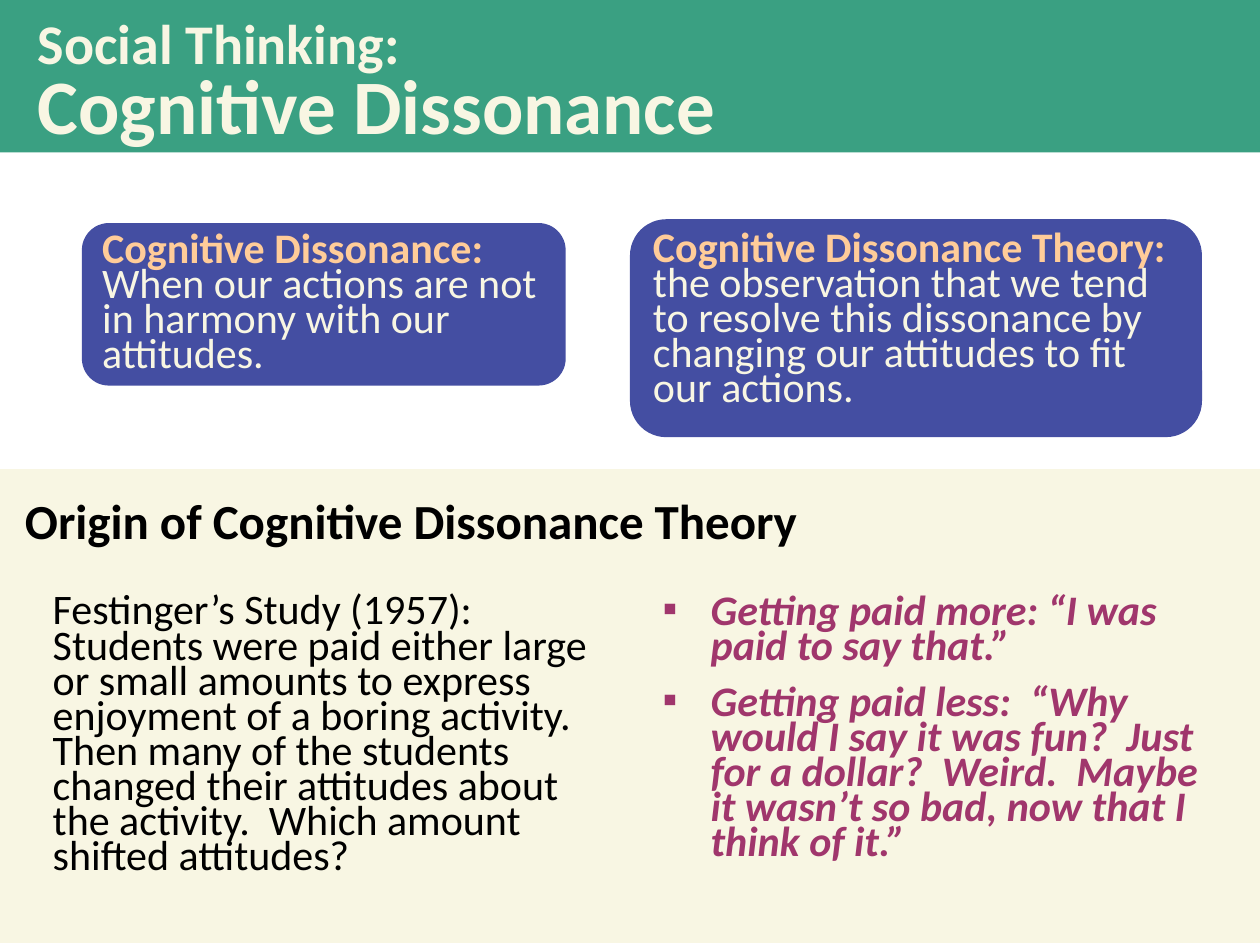
import lxml.etree
import pptx
import pptx.dml.color
import pptx.enum.shapes
import pptx.enum.text
import pptx.oxml.ns
import pptx.util

Inches = pptx.util.Inches
Pt = pptx.util.Pt
MSO_SHAPE = pptx.enum.shapes.MSO_SHAPE
MSO_ANCHOR = pptx.enum.text.MSO_ANCHOR
MSO_AUTO_SIZE = pptx.enum.text.MSO_AUTO_SIZE
PP_ALIGN = pptx.enum.text.PP_ALIGN

COLORS = {
    "banner": "3AA082",
    "cream": "F8F6E3",
    "card": "444EA2",
    "term": "FFCC99",
    "quote": "A0366C",
    "ink": "000000",
}


class SlideBuilder:
    """Holds the style and the current slide, with a method for each element."""

    font_name = "Calibri"
    body_size = 24
    line_pitch = 20

    def __init__(self, presentation):
        self.slide = presentation.slides.add_slide(presentation.slide_layouts[1])

    def rgb(self, color):
        return pptx.dml.color.RGBColor.from_string(COLORS[color])

    def fill(self, shape, color):
        shape.fill.solid()
        shape.fill.fore_color.rgb = self.rgb(color)

    def place(self, shape, left, top, width, height):
        shape.left, shape.top = Inches(left), Inches(top)
        shape.width, shape.height = Inches(width), Inches(height)

    def frame(self, shape, anchor=MSO_ANCHOR.TOP):
        text_frame = shape.text_frame
        text_frame.word_wrap = True
        text_frame.auto_size = MSO_AUTO_SIZE.NONE
        text_frame.vertical_anchor = anchor
        return text_frame

    def format(self, paragraph, color, size=body_size, bold=False, italic=False,
               pitch=line_pitch, after=0):
        paragraph.alignment = PP_ALIGN.LEFT
        paragraph.line_spacing = Pt(pitch)
        paragraph.space_before = Pt(0)
        paragraph.space_after = Pt(after)
        font = paragraph.font
        font.name, font.size = self.font_name, Pt(size)
        font.bold, font.italic = bold, italic
        font.color.rgb = self.rgb(color)

    def block(self, kind, color, *box):
        shape = self.slide.shapes.add_shape(kind, *map(Inches, box))
        shape.shadow.inherit = False
        self.fill(shape, color)
        shape.line.fill.background()
        return shape

    def panel(self, color, *box):
        panel = self.block(MSO_SHAPE.RECTANGLE, color, *box)
        panel.line.color.rgb = self.rgb(color)
        panel.line.width = Pt(2)
        panel.element.getparent().insert(2, panel.element)

    def title(self, lines, *box):
        title = self.slide.shapes.title
        self.place(title, *box)
        self.fill(title, "banner")
        text_frame = self.frame(title, MSO_ANCHOR.MIDDLE)
        text_frame.margin_left = Inches(0.3)
        paragraph = text_frame.paragraphs[0]
        self.format(paragraph, "cream", bold=True, pitch=42)
        for index, (text, size) in enumerate(lines):
            if index:
                paragraph.add_line_break()
            run = paragraph.add_run()
            run.text = text
            run.font.size = Pt(size)

    def definition(self, term, meaning, *box):
        card = self.block(MSO_SHAPE.ROUNDED_RECTANGLE, "card", *box)
        paragraph = self.frame(card).paragraphs[0]
        self.format(paragraph, "cream")
        for text in (term, meaning):
            run = paragraph.add_run()
            run.text = text
            run.font.bold = text == term
            run.font.color.rgb = self.rgb("term" if text == term else "cream")

    def text(self, content, *box, **style):
        text_box = self.slide.shapes.add_textbox(*map(Inches, box))
        paragraph = self.frame(text_box).paragraphs[0]
        paragraph.text = content
        self.format(paragraph, "ink", **style)

    def bullets(self, items, *box):
        body = self.slide.placeholders[1]
        self.place(body, *box)
        text_frame = self.frame(body)
        text_frame.text = "\n".join(items)
        for paragraph in text_frame.paragraphs:
            properties = paragraph._p.get_or_add_pPr()
            properties.set("marL", str(Inches(0.38)))
            properties.set("indent", str(-Inches(0.38)))
            bullet = lxml.etree.SubElement(properties, pptx.oxml.ns.qn("a:buChar"))
            bullet.set("char", "▪")
            self.format(paragraph, "quote", bold=True, italic=True, after=12)


def main():
    presentation = pptx.Presentation()
    presentation.slide_width, presentation.slide_height = Inches(10), Inches(7.5)
    builder = SlideBuilder(presentation)

    builder.title([("Social Thinking:", 32), ("Cognitive Dissonance", 44)],
                  0, 0, 10, 1.21)
    builder.panel("cream", 0, 3.74, 10, 3.73)
    builder.definition(
        "Cognitive Dissonance:  ",
        "When our actions are not in harmony with our attitudes.",
        0.65, 1.77, 3.84, 1.29)
    builder.definition(
        "Cognitive Dissonance Theory:",
        "  the observation that we tend to resolve this dissonance by "
        "changing our attitudes to fit our actions.",
        5, 1.74, 4.54, 1.73)
    builder.text("Origin of Cognitive Dissonance Theory",
                 0.1, 4.03, 7.54, 0.38, size=28, bold=True, after=6)
    builder.text(
        "Festinger’s Study (1957):  Students were paid either large or small "
        "amounts to express enjoyment of a boring activity.  Then many of the "
        "students changed their attitudes about the activity.  Which amount "
        "shifted attitudes?",
        0.32, 4.7, 4.68, 2.34)
    builder.bullets(
        ["Getting paid more: “I was paid to say that.”",
         "Getting paid less:  “Why would I say it was fun?  Just for a dollar?  "
         "Weird.  Maybe it wasn’t so bad, now that I think of it.”"],
        5.16, 4.7, 4.65, 2.23)

    presentation.save("out.pptx")


if __name__ == "__main__":
    main()
